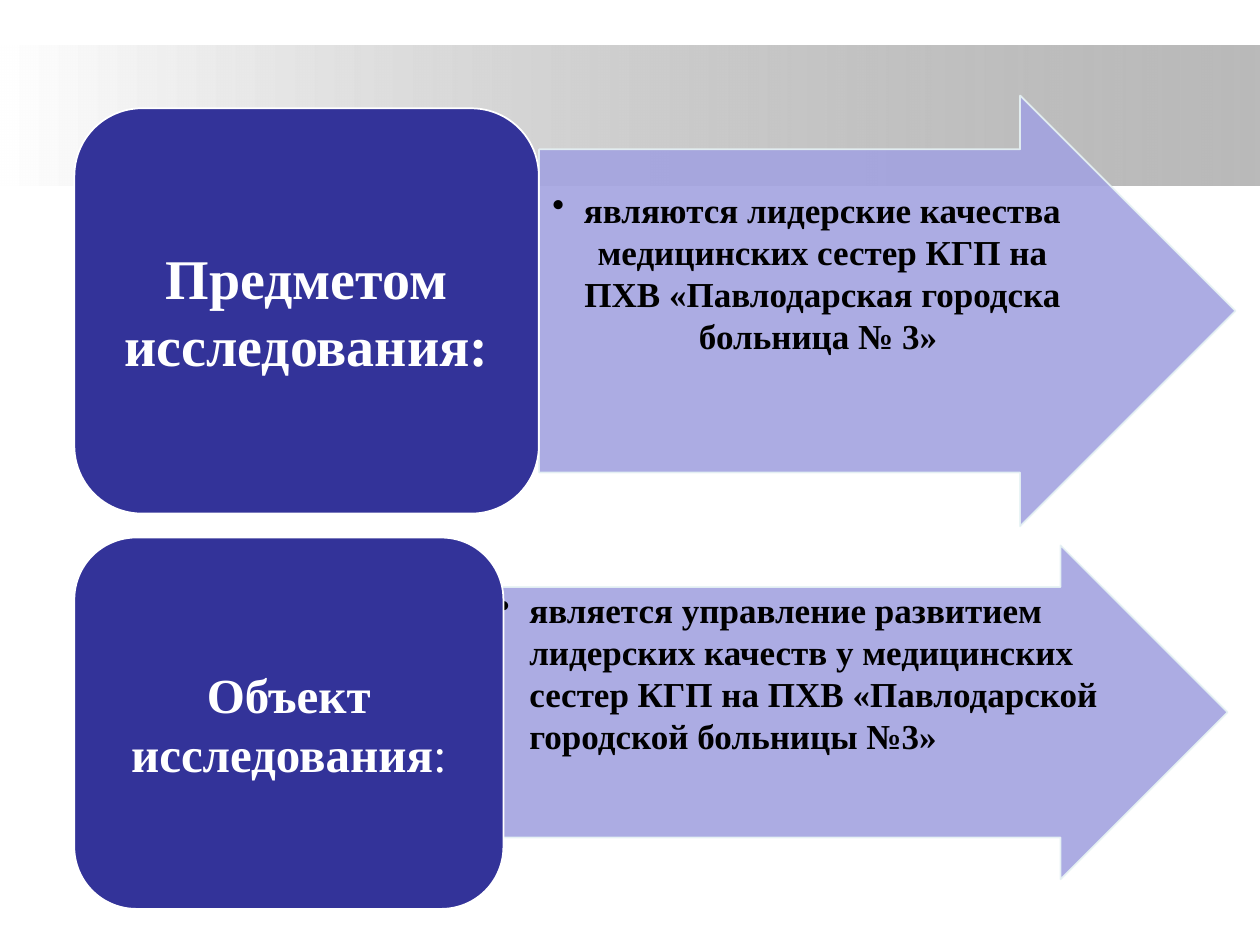
from pptx import Presentation
from pptx.dml.color import RGBColor
from pptx.enum.shapes import MSO_SHAPE as SHAPE
from pptx.enum.text import MSO_ANCHOR as ANCHOR, PP_ALIGN as ALIGN
from pptx.oxml.ns import qn
from pptx.util import Pt
from lxml.etree import SubElement

FONT = "Times New Roman"
BULLET_INDENT = 18


def rgb(value):
    return RGBColor.from_string(value)


def set_attrs(obj, values):
    for name, value in values.items():
        setattr(obj, name, value)


def set_alpha(color_el, percent):
    SubElement(color_el, qn("a:alpha"), val=str(percent * 1000))


def add_block(slide, kind, box, fill=None, line=None):
    sp = slide.shapes.add_shape(kind, *map(Pt, box))
    sp.shadow.inherit = False
    if fill:
        sp.fill.solid()
        sp.fill.fore_color.rgb = rgb(fill)
    if line:
        sp.line.color.rgb = rgb(line)
        sp.line.width = Pt(1)
    else:
        sp.line.fill.background()
    return sp


def set_frame(sp, margins, anchor):
    tf = sp.text_frame
    sides = ("margin_left", "margin_top", "margin_right", "margin_bottom")
    set_attrs(tf, dict(zip(sides, map(Pt, margins))))
    set_attrs(tf, {"word_wrap": True, "vertical_anchor": anchor})
    return tf.paragraphs[0]


def add_run(p, text, size, color, bold=True):
    r = p.add_run()
    r.text = text
    set_attrs(r.font, {"name": FONT, "size": Pt(size), "bold": bold})
    r.font.color.rgb = rgb(color)


def add_band(slide):
    sp = add_block(slide, SHAPE.RECTANGLE, (0, 26, 720, 80))
    sp.fill.gradient()
    sp.fill.gradient_angle = 0
    for stop, color in zip(sp.fill.gradient_stops, ("FFFFFF", "808080")):
        stop.color.rgb = rgb(color)
    set_alpha(list(sp.element.iter(qn("a:srgbClr")))[-1], 54)


def add_arrow(slide, box):
    sp = add_block(slide, SHAPE.RIGHT_ARROW, box, "A3A3E0", "E7F3F4")
    sp.adjustments[0], sp.adjustments[1] = 0.75, 0.5
    for color_el in sp.element.spPr.iter(qn("a:srgbClr")):
        set_alpha(color_el, 90)


def add_bullet(slide, box, text, align, top):
    sp = slide.shapes.add_textbox(*map(Pt, box))
    p = set_frame(sp, (1, top, 1, 1), ANCHOR.TOP)
    set_attrs(p, {"alignment": align, "level": 1})
    # Bullet with a hanging indent
    pPr = p._p.get_or_add_pPr()
    pPr.set("marL", str(Pt(BULLET_INDENT)))
    pPr.set("indent", str(-Pt(BULLET_INDENT)))
    SubElement(pPr, qn("a:buChar"), char="•")
    add_run(p, text, 20, "000000")


def add_label(slide, box, runs, size):
    sp = add_block(slide, SHAPE.ROUNDED_RECTANGLE, box, "333399", "FFFFFF")
    p = set_frame(sp, (9, 5, 9, 5), ANCHOR.MIDDLE)
    p.alignment = ALIGN.CENTER
    for text, bold in runs:
        add_run(p, text, size, "FFFFFF", bold)


def main():
    prs = Presentation()
    prs.slide_width, prs.slide_height = Pt(720), Pt(540)
    slide = prs.slides.add_slide(prs.slide_layouts[6])

    # Grey band behind the diagram
    add_band(slide)

    # Subject of the study
    add_arrow(slide, (308, 54.6, 398, 246.2))
    add_bullet(slide, (308, 85.7, 306, 185),
               "являются лидерские качества медицинских сестер КГП на ПХВ "
               "«Павлодарская городска больница № 3» ", ALIGN.CENTER, 22)
    add_label(slide, (42.5, 61.9, 265.4, 231.6),
              [("Предметом исследования:", True)], 32)

    # Object of the study
    add_arrow(slide, (283.5, 311.6, 418, 190.8))
    add_bullet(slide, (283.5, 335.5, 346.3, 143.3),
               "является управление развитием лидерских качеств у медицинских "
               "сестер КГП на ПХВ «Павлодарской городской больницы №3»",
               ALIGN.LEFT, 1)
    add_label(slide, (42.5, 307.2, 245.2, 212.2),
              [("Объект исследования", True), (":", False)], 28)

    prs.save("out.pptx")


if __name__ == "__main__":
    main()
